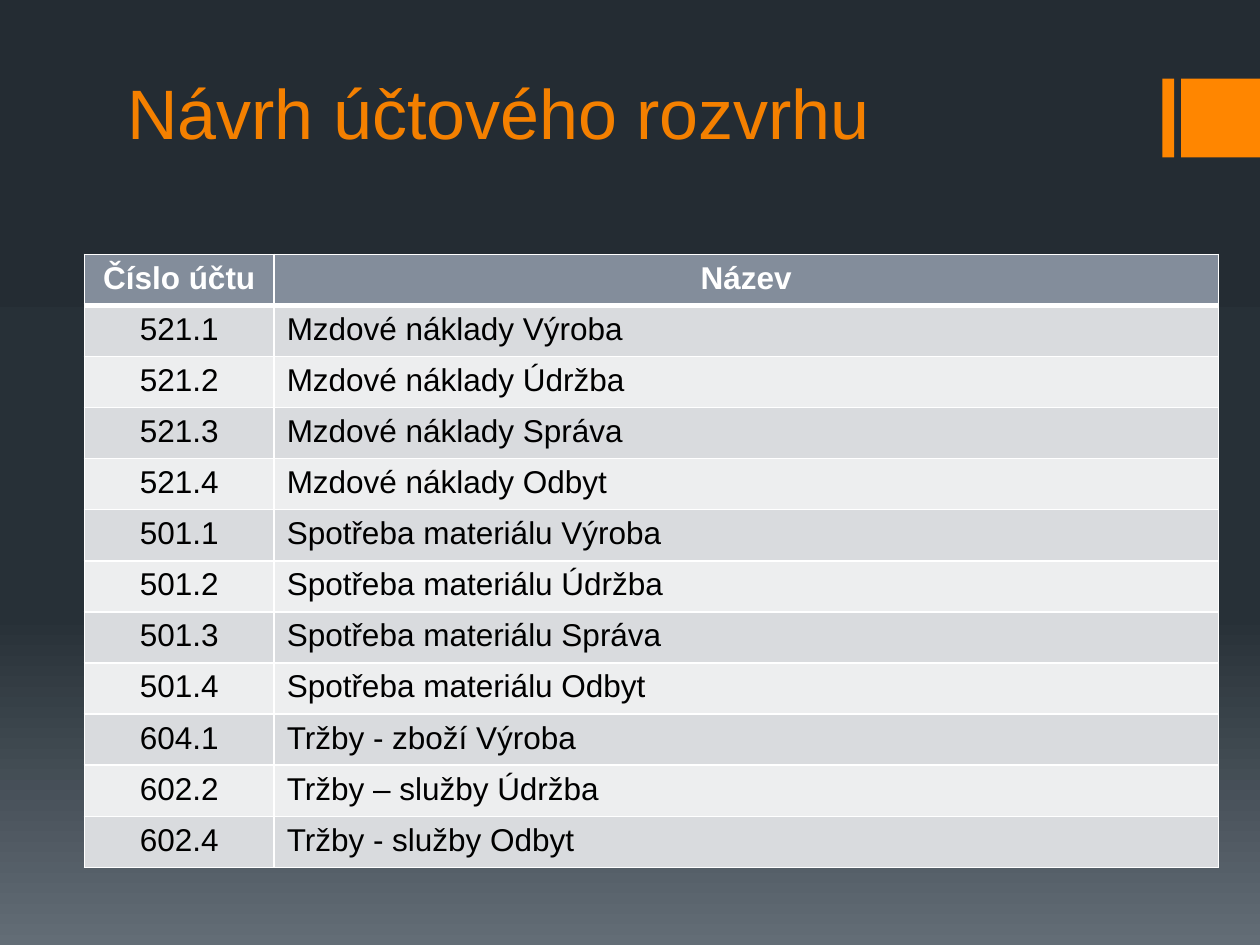
from copy import deepcopy
from dataclasses import dataclass

from lxml.etree import SubElement
from pptx import Presentation
from pptx.dml.color import RGBColor
from pptx.enum.shapes import MSO_SHAPE
from pptx.enum.text import MSO_ANCHOR, MSO_AUTO_SIZE, PP_ALIGN
from pptx.oxml.ns import qn
from pptx.util import Pt


@dataclass(frozen=True)
class Theme:
    font: str = "Arial"
    big: int = 40
    body: int = 18
    title: str = "F48000"
    accent: str = "FF8600"
    head: str = "838D9B"
    bands: tuple = ("D9DBDE", "EDEEEF")
    light: str = "FFFFFF"
    dark: str = "000000"
    back: tuple = ((0, "242C33"), (0.65, "273037"), (1, "636D76"))


THEME = Theme()
HEAD = ("Číslo účtu", "Název")
ROWS = (
    ("521.1", "Mzdové náklady Výroba"),
    ("521.2", "Mzdové náklady Údržba"),
    ("521.3", "Mzdové náklady Správa"),
    ("521.4", "Mzdové náklady Odbyt"),
    ("501.1", "Spotřeba materiálu Výroba"),
    ("501.2", "Spotřeba materiálu Údržba"),
    ("501.3", "Spotřeba materiálu Správa"),
    ("501.4", "Spotřeba materiálu Odbyt"),
    ("604.1", "Tržby - zboží Výroba"),
    ("602.2", "Tržby – služby Údržba"),
    ("602.4", "Tržby - služby Odbyt"),
)


def color(code):
    return RGBColor.from_string(code)


def write(frame, text, size=THEME.body, tint=THEME.dark, bold=False,
          align=PP_ALIGN.LEFT):
    para = frame.paragraphs[0]
    para.alignment = align
    run = para.add_run()
    run.text = text
    font = run.font
    font.name, font.size, font.bold = THEME.font, Pt(size), bold
    font.color.rgb = color(tint)


def paint_back(slide):
    fill = slide.background.fill
    fill.gradient()
    fill.gradient_angle = 270
    stops = slide.element.find(".//" + qn("a:gsLst"))
    stops.append(deepcopy(stops[-1]))
    for stop, (place, code) in zip(fill.gradient_stops, THEME.back):
        stop.position = place
        stop.color.rgb = color(code)


def add_title(slide, text):
    title = slide.shapes.title
    title.left, title.top = Pt(65.5), Pt(0.7)
    title.width, title.height = Pt(576), Pt(90.7)
    frame = title.text_frame
    frame.auto_size = MSO_AUTO_SIZE.NONE
    frame.vertical_anchor = MSO_ANCHOR.BOTTOM
    write(frame, text, size=THEME.big, tint=THEME.title)


def add_bar(slide, left, width):
    bar = slide.shapes.add_shape(
        MSO_SHAPE.RECTANGLE, Pt(left), Pt(45), Pt(width), Pt(45))
    bar.shadow.inherit = False
    bar.fill.solid()
    bar.fill.fore_color.rgb = color(THEME.accent)
    bar.line.fill.background()


def add_edges(cell, top, base):
    props = cell._tc.get_or_add_tcPr()
    for side, width in (("L", 1), ("R", 1), ("T", top), ("B", base)):
        line = SubElement(props, qn(f"a:ln{side}"), w=str(Pt(width)))
        fill = SubElement(line, qn("a:solidFill"))
        SubElement(fill, qn("a:srgbClr"), val=THEME.light)


def add_grid(slide, head, rows, left, top, widths, step):
    data = (head, *rows)
    table = slide.shapes.add_table(
        len(data), len(head), Pt(left), Pt(top),
        Pt(sum(widths)), Pt(step * len(data))).table
    for col, width in zip(table.columns, widths):
        col.width = Pt(width)
    for i, row in enumerate(data):
        table.rows[i].height = Pt(step)
        first = i == 0
        shade = THEME.head if first else THEME.bands[(i - 1) % 2]
        for j, text in enumerate(row):
            cell = table.cell(i, j)
            add_edges(cell, top=3 if i == 1 else 1, base=3 if first else 1)
            cell.fill.solid()
            cell.fill.fore_color.rgb = color(shade)
            mid = first or j == 0
            write(cell.text_frame, text, bold=first,
                  tint=THEME.light if first else THEME.dark,
                  align=PP_ALIGN.CENTER if mid else PP_ALIGN.LEFT)


def main():
    deck = Presentation()
    deck.slide_width, deck.slide_height = Pt(720), Pt(540)
    slide = deck.slides.add_slide(deck.slide_layouts[5])
    paint_back(slide)
    add_bar(slide, left=664.3, width=6.7)
    add_bar(slide, left=675, width=45)
    add_title(slide, "Návrh účtového rozvrhu")
    add_grid(slide, HEAD, ROWS, left=48.2, top=145.3,
             widths=(108.5, 539.5), step=29.2)
    deck.save("out.pptx")


if __name__ == "__main__":
    main()
